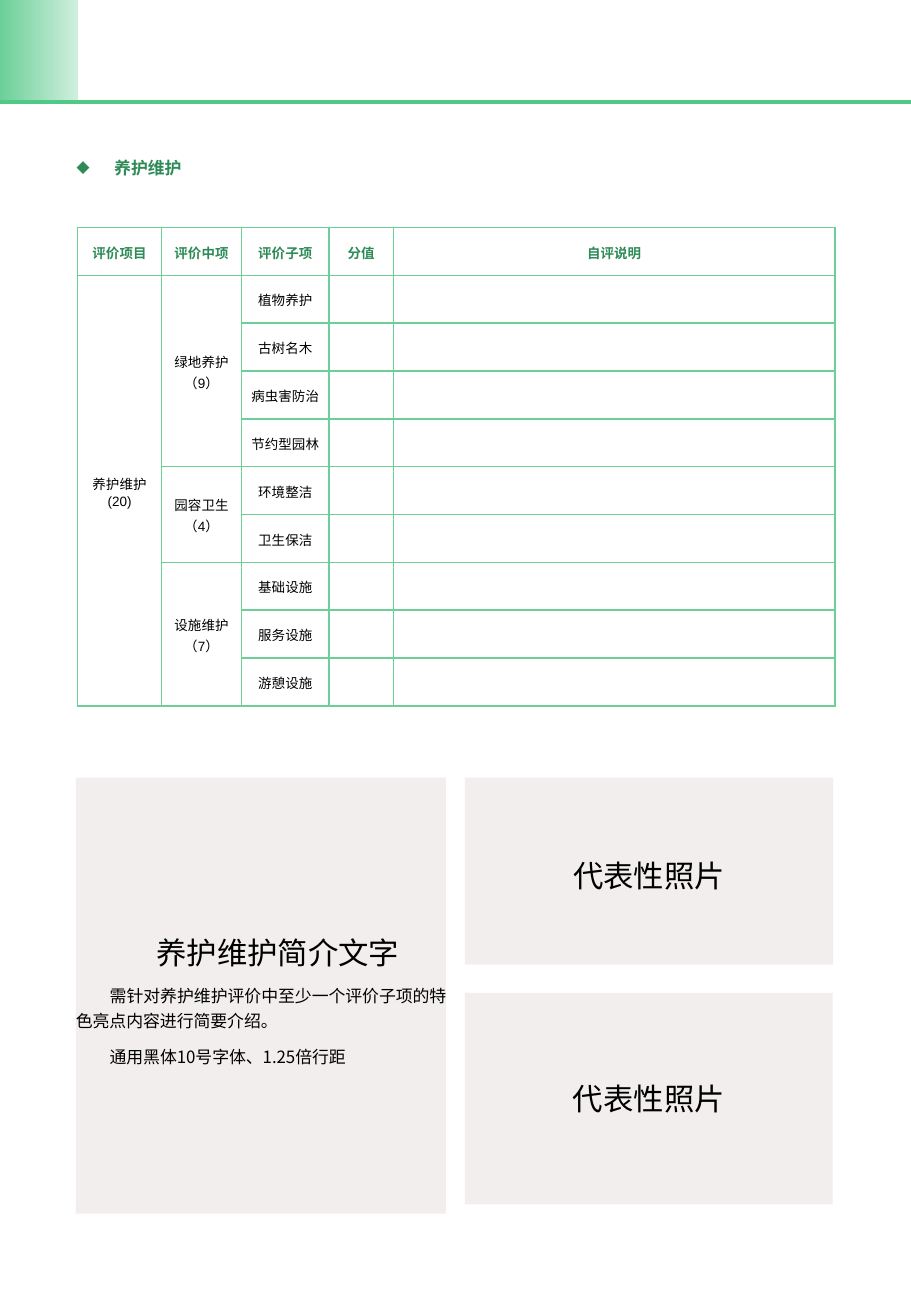
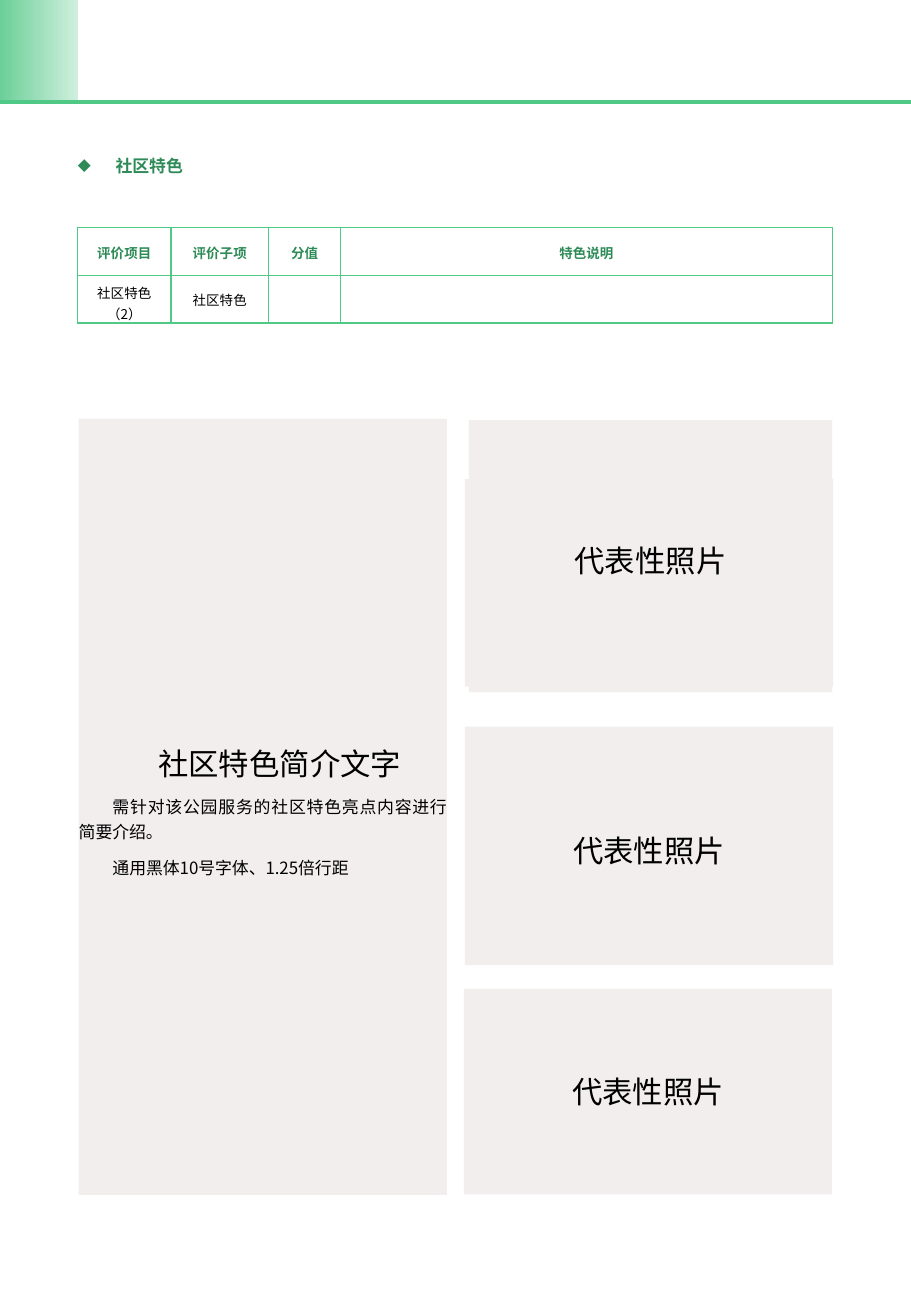
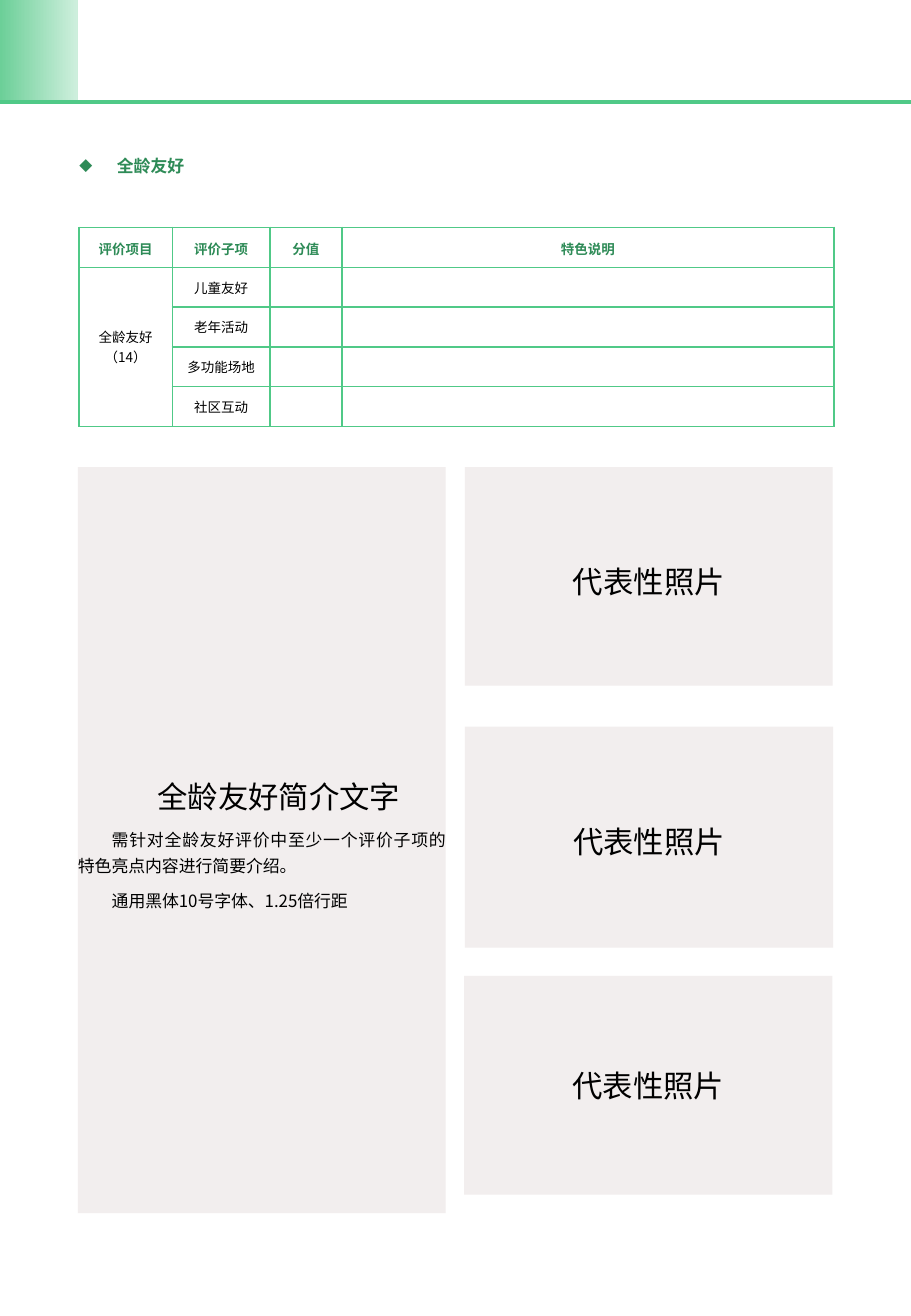
"""Build three park self-assessment pages: heading, score table, intro text and photo blocks."""
from lxml import etree
from pptx import Presentation
from pptx.dml.color import RGBColor
from pptx.enum.shapes import MSO_CONNECTOR, MSO_SHAPE
from pptx.enum.text import MSO_ANCHOR, MSO_AUTO_SIZE, PP_ALIGN
from pptx.oxml.ns import qn
from pptx.util import Pt

CENTER, JUSTIFY = PP_ALIGN.CENTER, PP_ALIGN.JUSTIFY
MIDDLE = MSO_ANCHOR.MIDDLE
RECTANGLE = MSO_SHAPE.RECTANGLE
STRAIGHT = MSO_CONNECTOR.STRAIGHT
GROW = MSO_AUTO_SIZE.SHAPE_TO_FIT_TEXT

WIDTH, HEIGHT = 540, 779.8
BAND_WIDTH, BAND_HEIGHT = 46, 60.4
TABLE_TOP = 134.8
HEADING_INDENT, INTRO_INDENT = 22.3, 20
CELL_SIDE, CELL_TOP = 5.2, 3.6

SANS, ARIAL = "Noto Sans CJK SC", "Arial"
GREEN, MINT, PALE = "50C987", "6CCF98", "CEEFDD"
DARK_GREEN, BLACK, PANEL = "2E8B57", "000000", "F2EEEE"

PHOTO = "代表性照片"
FORMAT_NOTE = "通用黑体10号字体、1.25倍行距"
FEATURE_HEADER = ["评价项目", "评价子项", "分值", "特色说明"]
FEATURE_COLUMNS = [55.4, 57.8, 42.7, 291.6]

PAGES = [
    {
        "heading": ("养护维护", 45.4, 90.7),
        "table": {
            "left": 46, "row_height": 28.37, "border": MINT, "font": ARIAL, "spacing": 1.07,
            "columns": [49.8, 47.4, 51.9, 38.2, 261.7],
            "rows": [
                ["评价项目", "评价中项", "评价子项", "分值", "自评说明"],
                ["养护维护\n(20)", "绿地养护（9）", "植物养护", "", ""],
                [None, None, "古树名木", "", ""],
                [None, None, "病虫害防治", "", ""],
                [None, None, "节约型园林", "", ""],
                [None, "园容卫生（4）", "环境整洁", "", ""],
                [None, None, "卫生保洁", "", ""],
                [None, "设施维护（7）", "基础设施", "", ""],
                [None, None, "服务设施", "", ""],
                [None, None, "游憩设施", "", ""],
            ],
        },
        "intro": ("养护维护简介文字",
                  "需针对养护维护评价中至少一个评价子项的特色亮点内容进行简要介绍。",
                  (45, 460.8, 219.4, 258.4)),
        "photos": [(PHOTO, (275.6, 460.8, 218.2, 110.9)),
                   (PHOTO, (275.6, 588.3, 218, 125.4))],
    },
    {
        "heading": ("社区特色", 46.2, 89.4),
        "table": {
            "left": 46, "row_height": 28.37, "border": GREEN, "font": SANS, "spacing": 1.07,
            "columns": FEATURE_COLUMNS,
            "rows": [FEATURE_HEADER, ["社区特色\n（2）", "社区特色", "", ""]],
        },
        "intro": ("社区特色简介文字",
                  "需针对该公园服务的社区特色亮点内容进行简要介绍。",
                  (46.7, 248.2, 218.2, 459.8)),
        "photos": [("", (275.6, 283.9, 218.2, 123)),
                   (PHOTO, (277.9, 249, 215.4, 161.2)),
                   (PHOTO, (275.6, 430.6, 218.2, 141.2)),
                   (PHOTO, (275, 586, 218.2, 121.8))],
    },
    {
        "heading": ("全龄友好", 47, 89.4),
        "table": {
            "left": 46.8, "row_height": 23.6, "border": GREEN, "font": SANS, "spacing": 1.0,
            "columns": FEATURE_COLUMNS,
            "rows": [
                FEATURE_HEADER,
                ["全龄友好\n（14）", "儿童友好", "", ""],
                [None, "老年活动", "", ""],
                [None, "多功能场地", "", ""],
                [None, "社区互动", "", ""],
            ],
        },
        "intro": ("全龄友好简介文字",
                  "需针对全龄友好评价中至少一个评价子项的特色亮点内容进行简要介绍。",
                  (46.2, 276.8, 218, 442)),
        "photos": [(PHOTO, (275.6, 276.8, 218, 129.6)),
                   (PHOTO, (275.6, 430.6, 218.2, 131)),
                   (PHOTO, (275.2, 578.3, 218.2, 129.6))],
    },
]


def rgb(color):
    return RGBColor.from_string(color)


def points(*lengths):
    return [Pt(length) for length in lengths]


def write(paragraph, text, size, color=BLACK, bold=False, font=SANS,
          align=CENTER, spacing=None, after=None, left=0, indent=0):
    """Format a paragraph and give it one run, or only a size when the text is empty."""
    paragraph.alignment = align
    if spacing:
        paragraph.line_spacing = spacing
    if after:
        paragraph.space_after = Pt(after)
    if left or indent:
        properties = paragraph._p.get_or_add_pPr()
        properties.set("marL", str(Pt(left)))
        properties.set("indent", str(Pt(indent)))
    if not text:
        etree.SubElement(paragraph._p, qn("a:endParaRPr"), sz=str(size * 100))
        return
    run = paragraph.add_run()
    run.text = text
    run.font.size = Pt(size)
    run.font.bold = bold
    run.font.name = font
    run.font.color.rgb = rgb(color)
    etree.SubElement(run._r.get_or_add_rPr(), qn("a:ea"), typeface=SANS)


def clear_margins(frame):
    frame.word_wrap = True
    frame.margin_left = frame.margin_right = frame.margin_top = frame.margin_bottom = 0


def add_panel(slide, box):
    panel = slide.shapes.add_shape(RECTANGLE, *points(*box))
    panel.shadow.inherit = False
    panel.fill.solid()
    panel.fill.fore_color.rgb = rgb(PANEL)
    panel.line.fill.background()
    clear_margins(panel.text_frame)
    panel.text_frame.vertical_anchor = MIDDLE
    return panel.text_frame


def move_header_to_layout(slide, layout):
    """Draw the shared header band and rule, and keep them on the layout."""
    for placeholder in list(layout.placeholders):
        layout.shapes.element.remove(placeholder.element)
    band = slide.shapes.add_shape(RECTANGLE, *points(0, 0, BAND_WIDTH, BAND_HEIGHT))
    band.shadow.inherit = False
    band.line.fill.background()
    band.fill.gradient()
    band.fill.gradient_angle = 0
    for stop, color in zip(band.fill.gradient_stops, (MINT, PALE)):
        stop.color.rgb = rgb(color)
    rule = slide.shapes.add_connector(STRAIGHT, *points(0, BAND_HEIGHT, WIDTH, BAND_HEIGHT))
    rule.line.color.rgb = rgb(GREEN)
    rule.line.width = Pt(2.5)
    etree.SubElement(rule.element.spPr, qn("a:effectLst"))
    for part in (band, rule):
        layout.shapes.element.append(part.element)


def add_heading(slide, text, left, top):
    frame = slide.shapes.add_textbox(*points(left, top, 218, 14)).text_frame
    clear_margins(frame)
    frame.auto_size = GROW
    heading = frame.paragraphs[0]
    write(heading, text, 10, DARK_GREEN, True, align=JUSTIFY, spacing=1.25, after=12,
          left=HEADING_INDENT, indent=-HEADING_INDENT)
    etree.SubElement(heading._p.get_or_add_pPr(), qn("a:buChar"), char="◆")


def add_borders(cell, color):
    properties = cell._tc.get_or_add_tcPr()
    for position, side in enumerate("LRTB"):
        border = etree.Element(qn(f"a:ln{side}"), w=str(Pt(1)))
        fill = etree.SubElement(border, qn("a:solidFill"))
        etree.SubElement(fill, qn("a:srgbClr"), val=color)
        properties.insert(position, border)


def add_score_table(slide, left, row_height, border, font, spacing, columns, rows):
    """Add a bordered table in which None continues the cell above."""
    frame = slide.shapes.add_table(
        len(rows), len(columns),
        *points(left, TABLE_TOP, sum(columns), row_height * len(rows)))
    table = frame.table
    table.first_row = table.horz_banding = False
    for column, width in zip(table.columns, columns):
        column.width = Pt(width)
    for row in table.rows:
        row.height = Pt(row_height)
    for r, row in enumerate(rows):
        header = r == 0
        for c, text in enumerate(row):
            cell = table.cell(r, c)
            cell.fill.background()
            add_borders(cell, border)
            last = r
            while text and last + 1 < len(rows) and rows[last + 1][c] is None:
                last += 1
            if last > r:
                cell.merge(table.cell(last, c))
            lines = (text or "").split("\n")
            crowded = len(lines) > 1 and last == r
            cell.vertical_anchor = MIDDLE
            cell.margin_left = cell.margin_right = Pt(CELL_SIDE)
            cell.margin_top = Pt(CELL_TOP)
            cell.margin_bottom = Pt(0 if crowded else CELL_TOP)
            for i, line in enumerate(lines):
                paragraph = cell.text_frame.add_paragraph() if i else cell.text_frame.paragraphs[0]
                write(paragraph, line, 8, DARK_GREEN if header else BLACK, header, font,
                      spacing=1.07 if header else spacing)


def add_intro(slide, title, body, box):
    frame = add_panel(slide, box)
    write(frame.paragraphs[0], title, 18, spacing=1.25, after=6, indent=INTRO_INDENT)
    for text in (body, FORMAT_NOTE):
        write(frame.add_paragraph(), text, 10, align=JUSTIFY, spacing=1.25, after=6,
              indent=INTRO_INDENT)


def add_photos(slide, photos):
    for number, (label, box) in enumerate(photos, 1):
        frame = add_panel(slide, box)
        spaced = {"spacing": 1.25, "after": 6} if number < len(photos) else {}
        write(frame.paragraphs[0], label, 18, **spaced)


def main():
    deck = Presentation()
    deck.slide_width, deck.slide_height = points(WIDTH, HEIGHT)
    blank = deck.slide_layouts[6]
    for number, page in enumerate(PAGES):
        slide = deck.slides.add_slide(blank)
        if number == 0:
            move_header_to_layout(slide, blank)
        add_heading(slide, *page["heading"])
        add_score_table(slide, **page["table"])
        add_intro(slide, *page["intro"])
        add_photos(slide, page["photos"])
    deck.save("out.pptx")


if __name__ == "__main__":
    main()
